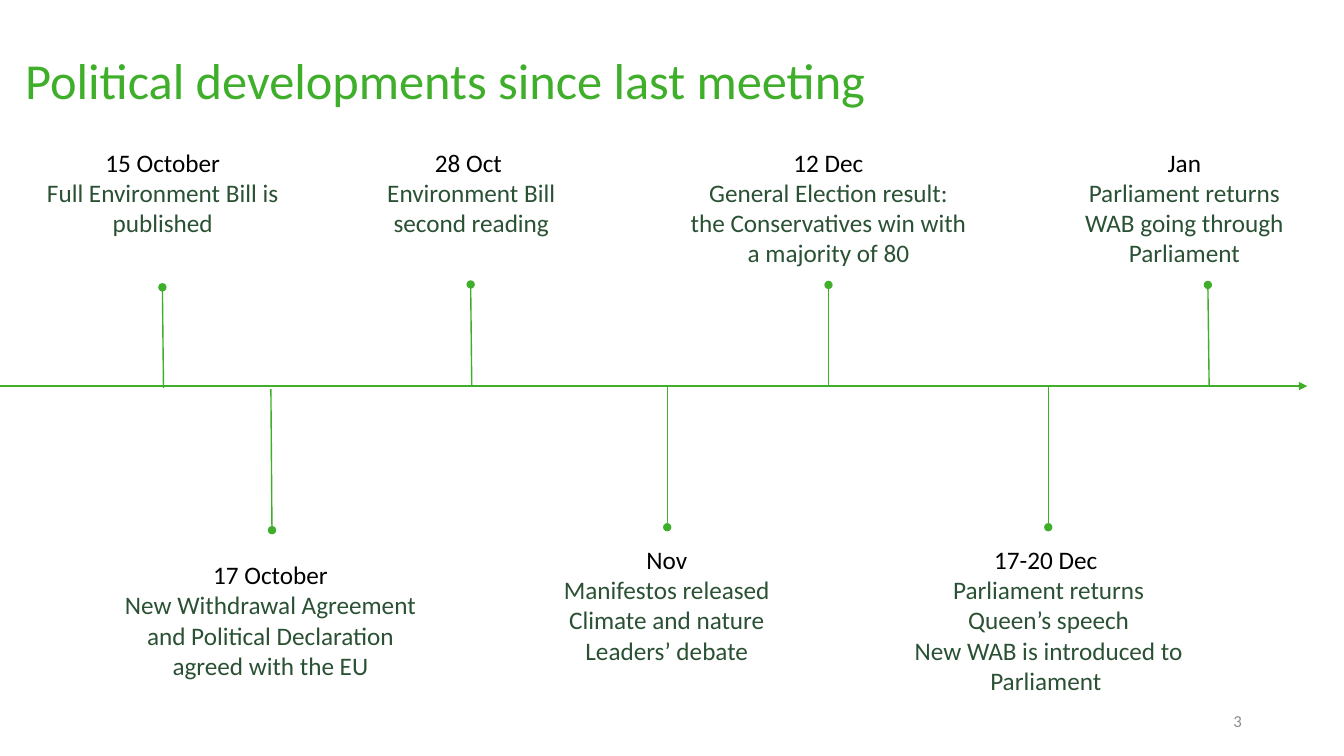
from pptx import Presentation
from pptx.dml.color import RGBColor
from pptx.enum.shapes import MSO_CONNECTOR
from pptx.enum.text import MSO_ANCHOR, PP_ALIGN
from pptx.oxml.ns import qn
from pptx.util import Pt
from lxml.etree import SubElement

GREEN = RGBColor(0x3F, 0xAE, 0x2A)
DARK = RGBColor(0x2B, 0x51, 0x34)
BLACK = RGBColor(0, 0, 0)
GRAY = RGBColor(0x8C, 0x8C, 0x8C)

TITLE = "Political developments since last meeting"
AXIS = 275.8
TOP = 101.5
LOW = 385.2

EVENTS = [
    ("15 October", ["Full Environment Bill is published"],
     (0, TOP, 232.5, 72.7), (116.8, 277.2, 116, 205.2)),
    ("17 October", ["New Withdrawal Agreement and Political Declaration agreed with the EU"],
     (77, 396, 232.5, 94.3), (193.5, 277.9, 194.3, 378.7)),
    ("28 Oct ", ["Environment Bill second reading"],
     (248.4, TOP, 176.4, 72.7), (337, AXIS, 336.2, 203.2)),
    ("Nov", ["Manifestos released", "Climate and nature Leaders’ debate"],
     (373, LOW, 206.6, 94.3), (476.6, AXIS, 476.6, 376.6)),
    ("12 Dec", ["General Election result: the Conservatives win with a majority of 80"],
     (485.3, TOP, 213, 94.3), (591.8, AXIS, 591.8, 203.5)),
    ("17-20 Dec ", ["Parliament returns", "Queen’s speech",
                    "New WAB is introduced to Parliament "],
     (638.6, LOW, 221, 116.6), (748.8, AXIS, 748.8, 376.6)),
    ("Jan", ["Parliament returns", "WAB going through Parliament"],
     (740.9, TOP, 210.2, 94.3), (863.7, AXIS, 862.8, 203.5)),
]


def write(slide, lines, box, size=18, align=PP_ALIGN.CENTER,
          anchor=MSO_ANCHOR.TOP, space=1.0):
    frame = slide.shapes.add_textbox(*map(Pt, box)).text_frame
    frame.word_wrap = True
    frame.vertical_anchor = anchor
    for i, (text, color) in enumerate(lines):
        para = frame.add_paragraph() if i else frame.paragraphs[0]
        para.alignment = align
        para.line_spacing = space
        run = para.add_run()
        run.text = text
        run.font.name = "Calibri"
        run.font.size = Pt(size)
        run.font.color.rgb = color


def draw(slide, ends, tip):
    link = slide.shapes.add_connector(MSO_CONNECTOR.STRAIGHT, *map(Pt, ends))
    link.line.color.rgb = GREEN
    link.line.width = Pt(1)
    props = link._element.spPr
    SubElement(props.find(qn("a:ln")), qn("a:tailEnd"), type=tip)
    SubElement(props, qn("a:effectLst"))


def main():
    deck = Presentation()
    deck.slide_width, deck.slide_height = Pt(960), Pt(540)
    slide = deck.slides.add_slide(deck.slide_layouts[6])
    write(slide, [(TITLE, GREEN)], (10.8, 14.4, 730, 90), size=36,
          align=PP_ALIGN.LEFT, anchor=MSO_ANCHOR.MIDDLE, space=0.9)
    write(slide, [("3", GRAY)], (678.2, 500.4, 216, 28.8), size=12,
          align=PP_ALIGN.RIGHT, anchor=MSO_ANCHOR.MIDDLE)
    draw(slide, (0, AXIS, 933.8, AXIS), "triangle")
    for date, body, box, stem in EVENTS:
        write(slide, [(date, BLACK)] + [(text, DARK) for text in body], box)
        draw(slide, stem, "oval")
    deck.save("out.pptx")


if __name__ == "__main__":
    main()
